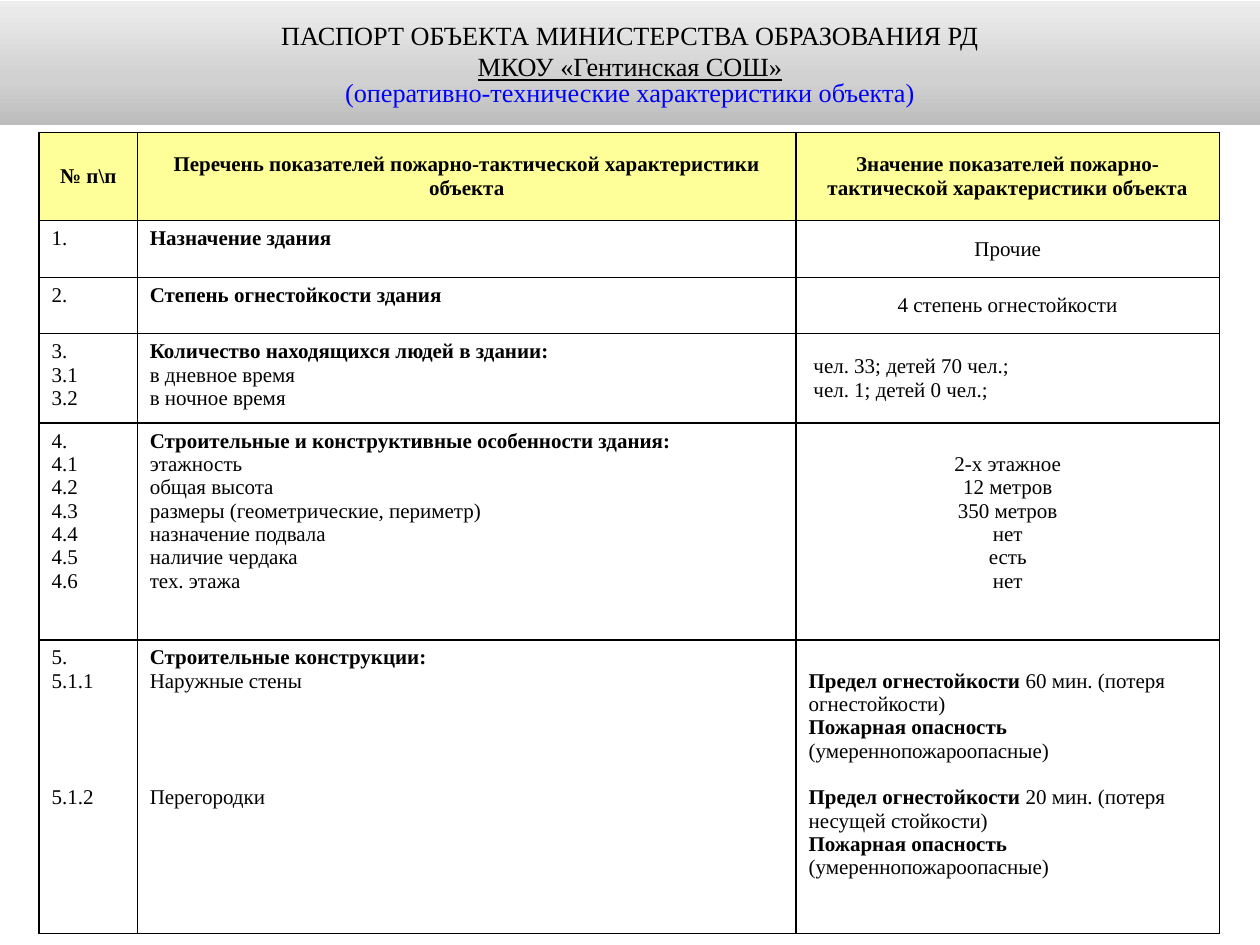
"""Builds the fire-safety passport slide of a school building."""
from copy import deepcopy

from lxml import etree
from pptx import Presentation
from pptx import util as u
from pptx.dml.color import RGBColor
from pptx.enum import shapes, text
from pptx.oxml.ns import qn

COLORS = {"black": "000000", "blue": "0000FF", "white": "FFFFFF", "yellow": "FFFF99",
          "dark": "BCBCBC", "middle": "D0D0D0", "light": "EDEDED"}
CENTER, LEFT = text.PP_ALIGN.CENTER, text.PP_ALIGN.LEFT
MIDDLE, TOP = text.MSO_ANCHOR.MIDDLE, text.MSO_ANCHOR.TOP

TITLE = [
    ("ПАСПОРТ ОБЪЕКТА МИНИСТЕРСТВА ОБРАЗОВАНИЯ РД", "black", False, 1),
    ("МКОУ «Гентинская СОШ»", "black", True, 1),
    ("(оперативно-технические характеристики объекта)", "blue", False, 0.8),
]
BAND = [(0, "dark"), (0.35, "middle"), (1, "light")]
COLUMNS = [1.98, 13.28, 8.53]
ROWS = [1.78, 1.14, 1.14, 1.8, 4.37, 5.92]
HEADER = ["*№ п\\п*", "*Перечень показателей пожарно-тактической характеристики объекта*",
          "*Значение показателей пожарно-тактической характеристики объекта*"]
BODY = [
    (["1."], ["*Назначение здания*"], ["Прочие"], CENTER, MIDDLE),
    (["2."], ["*Степень огнестойкости здания*"], ["4 степень огнестойкости"], CENTER, MIDDLE),
    (["3.", "3.1", "3.2"],
     ["*Количество находящихся людей в здании:*", "в дневное время", "в ночное время"],
     ["чел. 33; детей 70 чел.;", "чел. 1; детей 0 чел.;"], LEFT, MIDDLE),
    (["4."] + [f"4.{number}" for number in range(1, 7)],
     ["*Строительные и конструктивные особенности здания:*", "этажность", "общая высота",
      "размеры (геометрические, периметр)", "назначение подвала", "наличие чердака",
      "тех. этажа"],
     ["\n2-х этажное", "12 метров", "350 метров", "нет", "есть", "нет"], CENTER, TOP),
    (["5.", "5.1.1", "\n\n\n\n5.1.2"],
     ["*Строительные конструкции:*", "Наружные стены", "\n\n\n\nПерегородки"],
     ["\n*Предел огнестойкости *60 мин. (потеря огнестойкости)",
      "*Пожарная опасность *(умереннопожароопасные)",
      "\n*Предел огнестойкости *20 мин. (потеря несущей стойкости)",
      "*Пожарная опасность*", "(умереннопожароопасные)"], LEFT, TOP),
]


class Builder:
    """Holds the style and the current slide."""

    font = "Times New Roman"
    line_height = 13.3

    def __init__(self, slide):
        self.slide = slide

    def color(self, name):
        """Return the named colour."""
        return RGBColor.from_string(COLORS[name])

    def style(self, paragraph, size, color, align):
        """Set the font and alignment of a paragraph."""
        paragraph.alignment = align
        paragraph.font.name = self.font
        paragraph.font.size = u.Pt(size)
        paragraph.font.color.rgb = self.color(color)

    def band(self, box, stops, lines):
        """Add the gradient title band."""
        shape = self.slide.shapes.add_shape(shapes.MSO_SHAPE.RECTANGLE, *map(u.Cm, box))
        shape.shadow.inherit = False
        shape.line.fill.background()
        shape.fill.gradient()
        shape.fill.gradient_angle = 90
        stop_list = shape.element.spPr.find(".//" + qn("a:gsLst"))
        stop_list.insert(1, deepcopy(stop_list[0]))
        for stop, (position, color) in zip(shape.fill.gradient_stops, stops):
            stop.position = position
            stop.color.rgb = self.color(color)
        frame = shape.text_frame
        frame.word_wrap = True
        frame.vertical_anchor = MIDDLE
        for index, (line, color, underline, spacing) in enumerate(lines):
            paragraph = frame.add_paragraph() if index else frame.paragraphs[0]
            self.style(paragraph, 15, color, CENTER)
            paragraph.line_spacing = spacing
            paragraph.font.underline = underline
            paragraph.add_run().text = line

    def table(self, left, top, columns, rows):
        """Add a table with the given column widths and row heights."""
        frame = self.slide.shapes.add_table(len(rows), len(columns), u.Cm(left), u.Cm(top),
                                            u.Cm(sum(columns)), u.Cm(sum(rows)))
        table = frame.table
        table.first_row = table.horz_banding = False
        for column, width in zip(table.columns, columns):
            column.width = u.Cm(width)
        for row, height in zip(table.rows, rows):
            row.height = u.Cm(height)
        return table

    def cell(self, cell, lines, fill="white", align=LEFT, anchor=TOP, indent=0):
        """Fill a cell; asterisks enclose bold text, each leading newline is a line of space."""
        cell.fill.solid()
        cell.fill.fore_color.rgb = self.color(fill)
        cell.vertical_anchor = anchor
        self.borders(cell)
        cell.margin_left = u.Cm(0.25 + indent)
        cell.margin_right = u.Cm(0.25)
        cell.margin_top = cell.margin_bottom = u.Cm(0.13)
        frame = cell.text_frame
        for index, line in enumerate(lines):
            paragraph = frame.add_paragraph() if index else frame.paragraphs[0]
            self.style(paragraph, 12, "black", align)
            gap = u.Pt(line.count("\n") * self.line_height)
            if index:
                paragraph.space_before = gap
            else:
                cell.margin_top += gap
            for part, words in enumerate(line.strip("\n").split("*")):
                if words:
                    run = paragraph.add_run()
                    run.text = words
                    run.font.bold = part % 2 == 1

    def borders(self, cell):
        """Draw a thin black line on each side of a cell."""
        properties = cell._tc.get_or_add_tcPr()
        for index, side in enumerate("LRTB"):
            line = etree.Element(qn(f"a:ln{side}"), w=str(u.Pt(1)))
            solid = etree.SubElement(line, qn("a:solidFill"))
            etree.SubElement(solid, qn("a:srgbClr"), val=COLORS["black"])
            properties.insert(index, line)


def main():
    """Build and save the slide."""
    presentation = Presentation()
    presentation.slide_width, presentation.slide_height = u.Cm(25.4), u.Cm(19.05)
    builder = Builder(presentation.slides.add_slide(presentation.slide_layouts[6]))
    table = builder.table(0.79, 2.67, COLUMNS, ROWS)
    for column, heading in enumerate(HEADER):
        builder.cell(table.cell(0, column), [heading], "yellow", CENTER, MIDDLE)
    for row, (numbers, names, values, align, anchor) in enumerate(BODY, 1):
        builder.cell(table.cell(row, 0), numbers)
        builder.cell(table.cell(row, 1), names)
        indent = 0.1 if (align, anchor) == (LEFT, MIDDLE) else 0
        builder.cell(table.cell(row, 2), values, align=align, anchor=anchor, indent=indent)
    builder.band((0, 0.03, 25.4, 2.49), BAND, TITLE)
    presentation.save("out.pptx")


if __name__ == "__main__":
    main()
